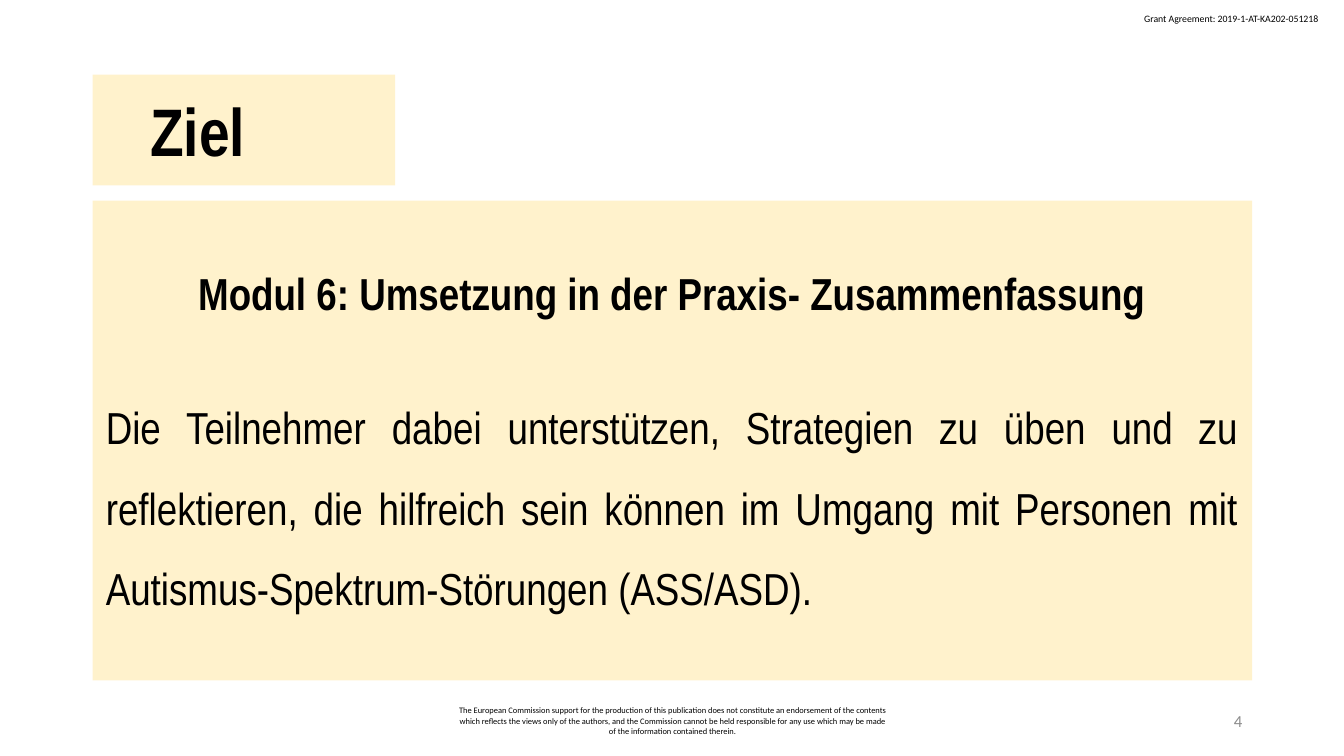
from pptx import Presentation
from pptx.dml.color import RGBColor
from pptx.enum.shapes import MSO_SHAPE as Shape
from pptx.enum.text import MSO_ANCHOR as Anchor, PP_ALIGN as Align
from pptx.util import Inches, Pt

BLACK, GREY, CREAM = "000000", "8C8C8C", "FFF2CC"
NARROW = {"name": "Arial Narrow", "size": Pt(32), "bold": False}
SMALL = {"name": "Calibri"}


def color(hex_text):
    """Turn a hex string into a colour."""
    return RGBColor.from_string(hex_text)


def apply(target, values):
    """Set every attribute named in values on target."""
    for name, value in values.items():
        setattr(target, name, value)


def write(para, text, font, layout, ink=BLACK):
    """Write one formatted span into a paragraph."""
    span = para.add_run()
    span.text = text
    apply(span.font, font)
    span.font.color.rgb = color(ink)
    apply(para, layout)


def add_note(page, place, text, font, layout, frame, ink=BLACK):
    """Add a small text box at the edge of the page."""
    box = page.shapes.add_textbox(*map(Inches, place))
    apply(box.text_frame, frame)
    write(box.text_frame.paragraphs[0], text, font, layout, ink)


def add_panel(page, place, left_inset=0.13):
    """Add a cream rectangle and return its text frame."""
    panel = page.shapes.add_shape(Shape.RECTANGLE, *map(Inches, place))
    panel.shadow.inherit = False
    panel.fill.solid()
    panel.fill.fore_color.rgb = color(CREAM)
    panel.line.fill.background()
    apply(panel.text_frame, {
        "word_wrap": True, "vertical_anchor": Anchor.MIDDLE,
        "margin_left": Inches(left_inset), "margin_right": Inches(0.13),
        "margin_top": Inches(0.07), "margin_bottom": Inches(0.07)})
    return panel.text_frame


def main():
    """Build the goal page of module 6."""
    deck = Presentation()
    apply(deck, {"slide_width": Inches(13.33), "slide_height": Inches(7.5)})
    page = deck.slides.add_slide(deck.slide_layouts[6])

    footer = {"word_wrap": True, "vertical_anchor": Anchor.MIDDLE}
    add_note(page, (11.25, 0.08, 1.97, 0.22),
             "Grant Agreement: 2019-1-AT-KA202-051218",
             SMALL | {"size": Pt(7)}, {"alignment": Align.LEFT},
             {"word_wrap": False})
    add_note(page, (4.42, 6.95, 4.5, 0.4),
             "The European Commission support for the production of this "
             "publication does not constitute an endorsement of the contents "
             "which reflects the views only of the authors, and the Commission "
             "cannot be held responsible for any use which may be made of the "
             "information contained therein.",
             SMALL | {"size": Pt(6)}, {"alignment": Align.CENTER}, footer)
    add_note(page, (9.42, 6.95, 3, 0.4), "4", SMALL | {"size": Pt(12)},
             {"alignment": Align.RIGHT}, footer, GREY)

    title = add_panel(page, (0.92, 0.74, 3, 1.1), left_inset=0.57)
    write(title.paragraphs[0], "Ziel",
          NARROW | {"size": Pt(48), "bold": True}, {"alignment": Align.LEFT})

    goal = add_panel(page, (0.92, 1.99, 11.5, 4.76))
    write(goal.paragraphs[0],
          "Modul 6: Umsetzung in der Praxis- Zusammenfassung",
          NARROW | {"bold": True}, {"alignment": Align.CENTER})
    write(goal.add_paragraph(),
          "Die Teilnehmer dabei unterstützen, Strategien zu üben und zu "
          "reflektieren, die hilfreich sein können im Umgang mit Personen mit "
          "Autismus-Spektrum-Störungen (ASS/ASD).", NARROW,
          {"alignment": Align.JUSTIFY, "line_spacing": 1.5,
           "space_before": Pt(38)})

    deck.save("out.pptx")


if __name__ == "__main__":
    main()
